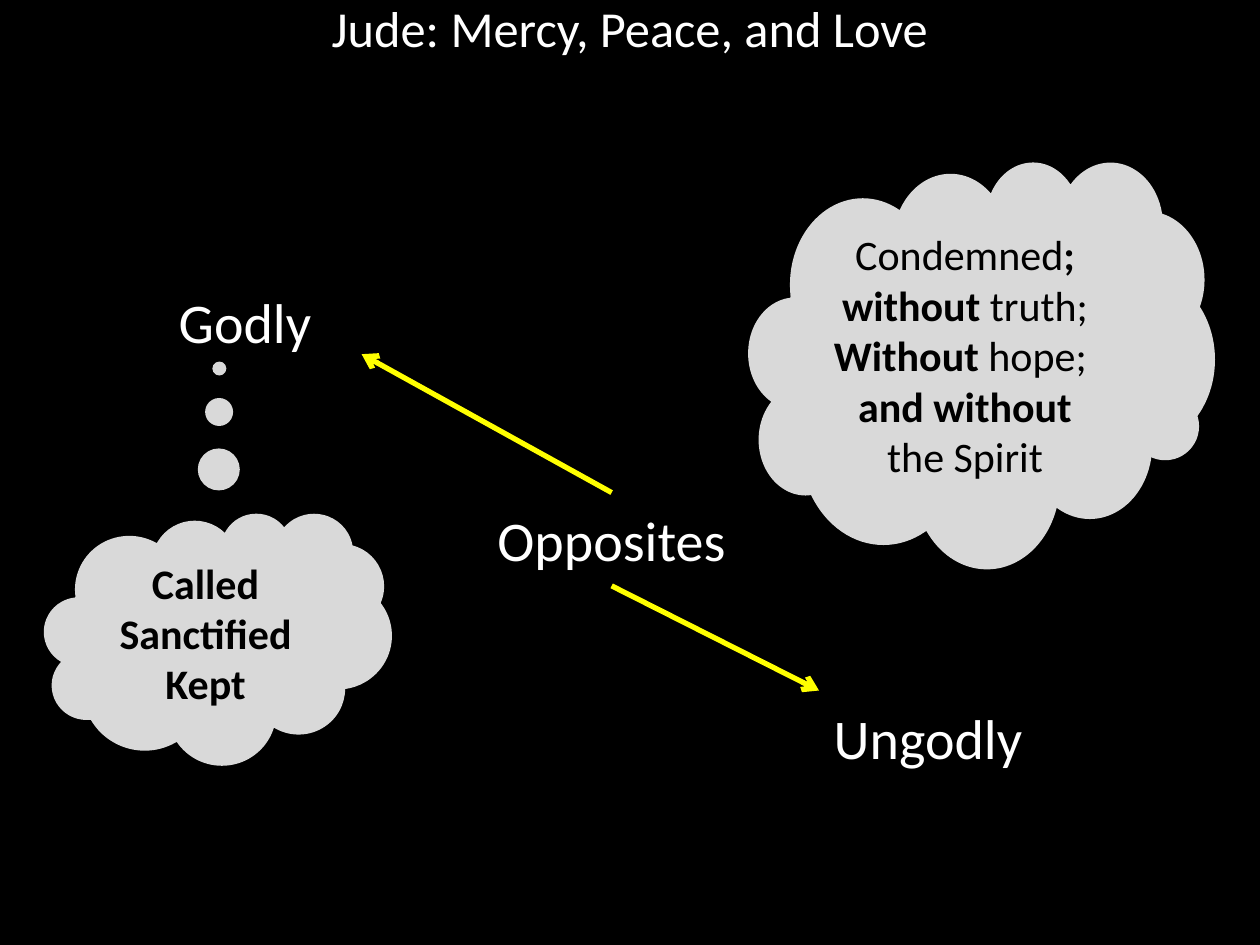
from dataclasses import dataclass

from lxml import etree
from pptx import Presentation
from pptx.dml.color import RGBColor
from pptx.enum.shapes import MSO_CONNECTOR, MSO_SHAPE
from pptx.enum.text import MSO_ANCHOR, MSO_AUTO_SIZE, PP_ALIGN
from pptx.oxml.ns import qn
from pptx.util import Cm, Pt

CLOUD = MSO_SHAPE.CLOUD_CALLOUT
LINE = MSO_CONNECTOR.STRAIGHT
MIDDLE, TOP = MSO_ANCHOR.MIDDLE, MSO_ANCHOR.TOP
CENTER = PP_ALIGN.CENTER
GROW = MSO_AUTO_SIZE.SHAPE_TO_FIT_TEXT
TOP_SIDE, LOW_SIDE = 0, 2


@dataclass(frozen=True)
class Theme:
    font: str = "Calibri"
    back: RGBColor = RGBColor(0, 0, 0)
    light: RGBColor = RGBColor(255, 255, 255)
    dark: RGBColor = RGBColor(0, 0, 0)
    cloud: RGBColor = RGBColor(0xD9, 0xD9, 0xD9)
    arrow: RGBColor = RGBColor(255, 255, 0)
    title: float = 28.8
    label: float = 32
    note: float = 24
    stroke: float = 3


THEME = Theme()


def style(run, size, color, bold=False):
    font = run.font
    font.name = THEME.font
    font.size = Pt(size)
    font.bold = bold
    font.color.rgb = color


def add_label(slide, text, left, top, width=7.24, height=1.88, size=THEME.label):
    box = slide.shapes.add_textbox(Cm(left), Cm(top), Cm(width), Cm(height))
    frame = box.text_frame
    frame.word_wrap = True
    frame.vertical_anchor = MIDDLE
    frame.text = text
    para = frame.paragraphs[0]
    para.alignment = CENTER
    style(para.runs[0], size, THEME.light)
    return box


def add_cloud(slide, lines, left, top, width, height, tail):
    """Each line is a list of (text, bold) pairs; tail is the callout tip."""
    cloud = slide.shapes.add_shape(CLOUD, Cm(left), Cm(top), Cm(width), Cm(height))
    cloud.shadow.inherit = False
    cloud.adjustments[0], cloud.adjustments[1] = tail
    cloud.fill.solid()
    cloud.fill.fore_color.rgb = THEME.cloud
    cloud.line.fill.background()
    frame = cloud.text_frame
    frame.word_wrap = True
    frame.auto_size = GROW
    frame.vertical_anchor = TOP
    for i, line in enumerate(lines):
        para = frame.add_paragraph() if i else frame.paragraphs[0]
        para.alignment = CENTER
        for text, bold in line:
            run = para.add_run()
            run.text = text
            style(run, THEME.note, THEME.dark, bold)


def add_arrow(slide, box, side, x, y):
    arrow = slide.shapes.add_connector(LINE, 0, 0, Cm(x), Cm(y))
    arrow.begin_connect(box, side)
    arrow.line.color.rgb = THEME.arrow
    arrow.line.width = Pt(THEME.stroke)
    # Arrowhead at the far end, no shadow
    etree.SubElement(arrow.line._get_or_add_ln(), qn("a:tailEnd"), type="arrow")
    etree.SubElement(arrow._element.spPr, qn("a:effectLst"))


def main():
    deck = Presentation()
    deck.slide_width, deck.slide_height = Cm(25.4), Cm(19.05)
    slide = deck.slides.add_slide(deck.slide_layouts[6])
    slide.background.fill.solid()
    slide.background.fill.fore_color.rgb = THEME.back

    # Title and labels
    add_label(slide, "Jude: Mercy, Peace, and Love", 0, 0, 25.4, 1.12, THEME.title)
    add_label(slide, "Godly", 1.32, 5.54)
    add_label(slide, "Ungodly", 15.09, 13.92)

    # Clouds
    godly = [[(word, True)] for word in ("Called", "Sanctified", "Kept")]
    add_cloud(slide, godly, 0.89, 10.34, 7.01, 5.08, (0.004, -1.073))
    ungodly = [
        [("Condemned", False), ("; without ", True), ("truth;", False)],
        [("Without", True), (" hope; ", False)],
        [("and without", True)],
        [("the Spirit", False)],
    ]
    add_cloud(slide, ungodly, 15.09, 3.25, 9.4, 8.2, (0.202, 0.078))

    # Opposites, with an arrow to each side
    hub = add_label(slide, "Opposites", 8.71, 9.93)
    add_arrow(slide, hub, TOP_SIDE, 7.29, 7.14)
    add_arrow(slide, hub, LOW_SIDE, 16.51, 13.92)

    deck.save("out.pptx")


if __name__ == "__main__":
    main()
